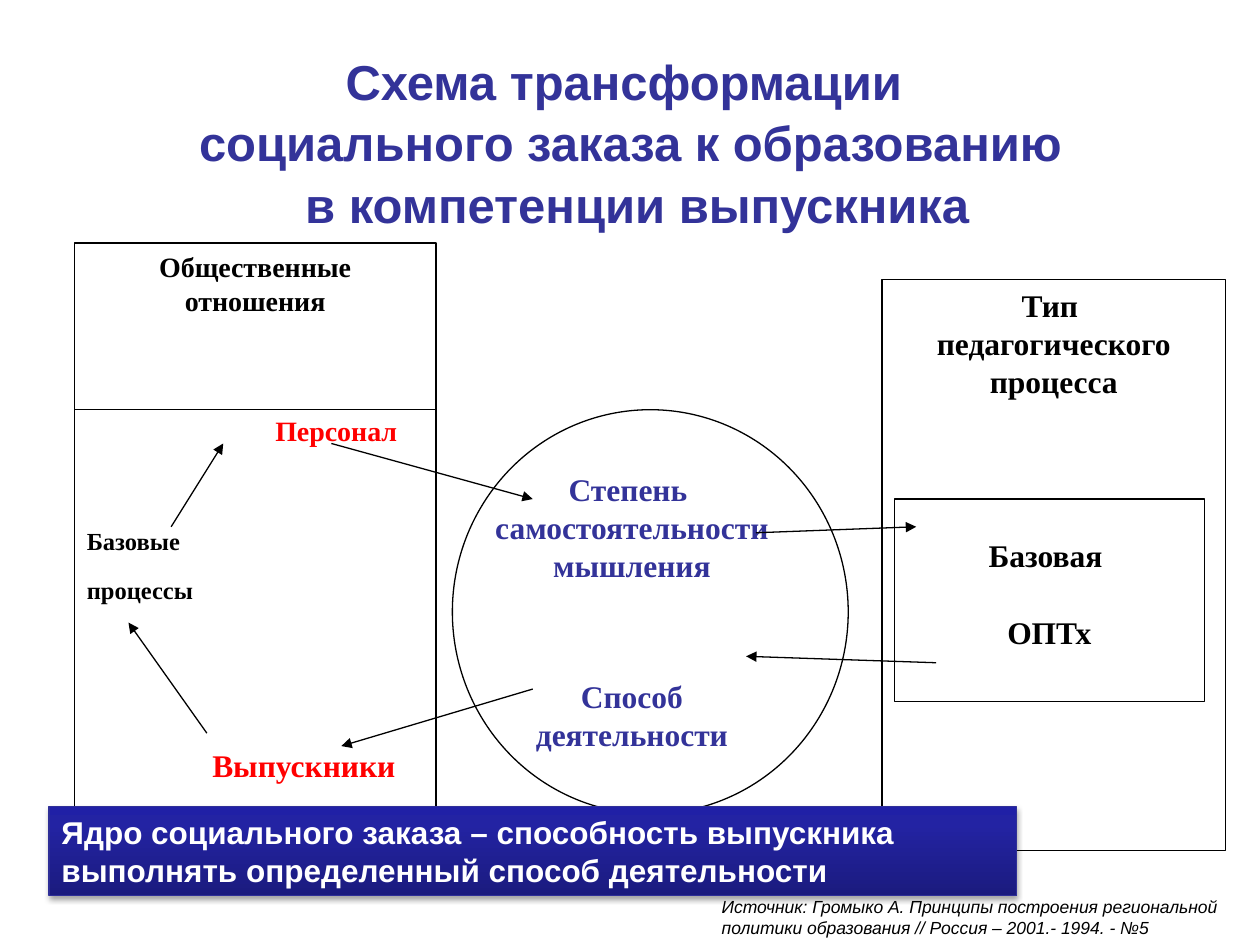
from copy import deepcopy

from lxml.etree import SubElement
from pptx import Presentation
from pptx.dml.color import RGBColor
from pptx.enum.shapes import MSO_CONNECTOR as Link, MSO_SHAPE as Shape
from pptx.enum.text import MSO_ANCHOR as Anchor, PP_ALIGN as Align
from pptx.oxml.ns import qn
from pptx.util import Cm, Pt

COLORS = {
    "ink": "000000", "paper": "FFFFFF", "indigo": "333399", "red": "FF0000",
    "core_dark": "1B1B7E", "core_mid": "2323A3", "core_top": "2020A6",
    "core_line": "2F2F98",
}
SERIF, SANS = "Times New Roman", "Arial"

TITLE = "Схема трансформации \vсоциального заказа к образованию\v в компетенции выпускника"
TITLE_BOX = (1.19, 0.58, 23.04, 4.52)
SOURCE = ("Источник: Громыко А. Принципы построения региональной политики "
          "образования // Россия – 2001.- 1994. - №5")
CORE = "Ядро социального заказа – способность выпускника выполнять определенный способ деятельности"
CORE_STOPS = [(0, "core_dark"), (0.8, "core_mid"), (1, "core_top")]

# Text styles: size, bold, italic, font name, colour
HEADING = dict(size=Pt(18), bold=True, name=SERIF, color="ink")
SMALL_HEADING = HEADING | dict(size=Pt(16))
PROCESS = HEADING | dict(size=Pt(14))
ABILITY = HEADING | dict(color="indigo")
PEOPLE = HEADING | dict(color="red")
CENTER = dict(alignment=Align.CENTER)
TIGHT = dict(line_spacing=0.96)

# Paragraphs: text, text style, paragraph format, left indent in cm
RELATIONS = [(t, SMALL_HEADING, CENTER, 0) for t in ("Общественные", "отношения")]
PROCESSES = [
    ("Персонал", PEOPLE | dict(size=Pt(16)), TIGHT, 3.8),
    ("Базовые", PROCESS, TIGHT | dict(space_before=Pt(45.5)), 0),
    ("процессы", PROCESS, TIGHT | dict(space_before=Pt(12)), 0),
    ("Выпускники", PEOPLE, TIGHT | dict(space_before=Pt(82)), 2.53),
]
TYPE = [(t, HEADING, CENTER, 0) for t in ("Тип ", "педагогического", "процесса")]
BASE = [
    ("Базовая ", HEADING, CENTER, 0),
    ("ОПТх", HEADING, CENTER | dict(space_before=Pt(22.5)), 0),
]
ABILITIES = [
    ("Степень ", ABILITY, CENTER, 0),
    ("самостоятельности", ABILITY, CENTER, 0),
    ("мышления", ABILITY, CENTER, 0),
    ("Способ", ABILITY, CENTER | dict(space_before=Pt(53.5)), 0),
    ("деятельности", ABILITY, CENTER, 0),
]

# Outlined figures: shape, box in cm, paragraphs, top inset in cm
FIGURES = [
    (Shape.OVAL, (9.12, 8.26, 7.98, 8.15), [], 0.13),
    (Shape.RECTANGLE, (1.5, 4.9, 7.29, 5.56), RELATIONS, 0.13),
    (Shape.RECTANGLE, (1.5, 8.26, 7.29, 9.27), PROCESSES, 0.13),
    (Shape.RECTANGLE, (17.78, 5.64, 6.93, 11.51), TYPE, 0.13),
    (Shape.RECTANGLE, (18.03, 10.06, 6.25, 4.09), BASE, 0.74),
]

# Arrows: from x, y to x, y in cm
ARROWS = [
    (6.68, 8.94, 10.74, 10.06),    # staff to thinking
    (15.24, 10.74, 18.47, 10.62),  # thinking to base
    (18.87, 13.36, 15.04, 13.23),  # base to activity
    (10.74, 13.89, 6.88, 15.04),   # activity to graduates
    (4.17, 14.78, 2.59, 12.55),    # graduates to processes
    (3.45, 10.62, 4.5, 8.94),      # processes to staff
]


def rgb(name):
    return RGBColor.from_string(COLORS[name])


def cm(values):
    return [Cm(v) for v in values]


def set_font(font, style):
    for key, value in style.items():
        if key == "color":
            font.color.rgb = rgb(value)
        else:
            setattr(font, key, value)


def write(frame, paragraphs, top=0.13):
    frame.word_wrap = True
    frame.vertical_anchor = Anchor.TOP
    frame.margin_top = Cm(top)
    for i, (text, style, layout, indent) in enumerate(paragraphs):
        para = frame.add_paragraph() if i else frame.paragraphs[0]
        for key, value in ({"alignment": Align.LEFT} | layout).items():
            setattr(para, key, value)
        if indent:
            para._p.get_or_add_pPr().set("marL", str(Cm(indent)))
        run = para.add_run()
        run.text = text
        set_font(run.font, style)


def outline(line, color):
    line.color.rgb = rgb(color)
    line.width = Pt(0.75)


def add_figure(shapes, kind, box, color="ink"):
    figure = shapes.add_shape(kind, *cm(box))
    figure.shadow.inherit = False
    outline(figure.line, color)
    return figure


def add_arrow(shapes, ends):
    arrow = shapes.add_connector(Link.STRAIGHT, *cm(ends))
    outline(arrow.line, "ink")
    SubElement(arrow.line._get_or_add_ln(), qn("a:tailEnd"), type="triangle")
    SubElement(arrow._element.spPr, qn("a:effectLst"))


def add_core(shapes):
    core = add_figure(shapes, Shape.RECTANGLE, (0.99, 16.26, 19.51, 1.8), "core_line")
    core.fill.gradient()
    core.fill.gradient_angle = 90
    stop_list = core._element.spPr.find(".//" + qn("a:gsLst"))
    stop_list.append(deepcopy(stop_list[0]))
    for stop, (position, color) in zip(core.fill.gradient_stops, CORE_STOPS):
        stop.position = position
        stop.color.rgb = rgb(color)
    # Soft shadow below
    effects = core._element.spPr.find(qn("a:effectLst"))
    shadow = SubElement(effects, qn("a:outerShdw"), blurRad=str(Pt(3.1)),
                        dist=str(Pt(1.8)), dir="5400000", rotWithShape="0")
    tone = SubElement(shadow, qn("a:srgbClr"), val=COLORS["ink"])
    SubElement(tone, qn("a:alpha"), val="35000")
    style = dict(size=Pt(18), bold=True, name=SANS, color="paper")
    write(core.text_frame, [(CORE, style, {}, 0)])


def main():
    prs = Presentation()
    prs.slide_width, prs.slide_height = cm((25.4, 19.05))
    slide = prs.slides.add_slide(prs.slide_layouts[5])
    shapes = slide.shapes

    # Title
    title = shapes.title
    title.left, title.top, title.width, title.height = cm(TITLE_BOX)
    title.text_frame.text = TITLE
    title.text_frame.vertical_anchor = Anchor.MIDDLE
    heading = title.text_frame.paragraphs[0]
    heading.alignment = Align.CENTER
    heading.line_spacing = 1.05
    for run in heading.runs:
        set_font(run.font, dict(size=Pt(28), bold=True, name=SANS, color="indigo"))

    # Circle and boxes
    for kind, box, paragraphs, top in FIGURES:
        figure = add_figure(shapes, kind, box)
        figure.fill.solid()
        figure.fill.fore_color.rgb = rgb("paper")
        write(figure.text_frame, paragraphs, top)

    # Text in the circle
    abilities = shapes.add_textbox(*cm((9.45, 9.35, 6.58, 5.94)))
    write(abilities.text_frame, ABILITIES)

    # Cycle of arrows
    for ends in ARROWS:
        add_arrow(shapes, ends)

    # Source and conclusion
    source = shapes.add_textbox(*cm((14.3, 17.93, 10.95, 1.12)))
    style = dict(size=Pt(10), italic=True, name=SANS, color="ink")
    write(source.text_frame, [(SOURCE, style, {}, 0)])
    add_core(shapes)

    prs.save("out.pptx")


if __name__ == "__main__":
    main()
